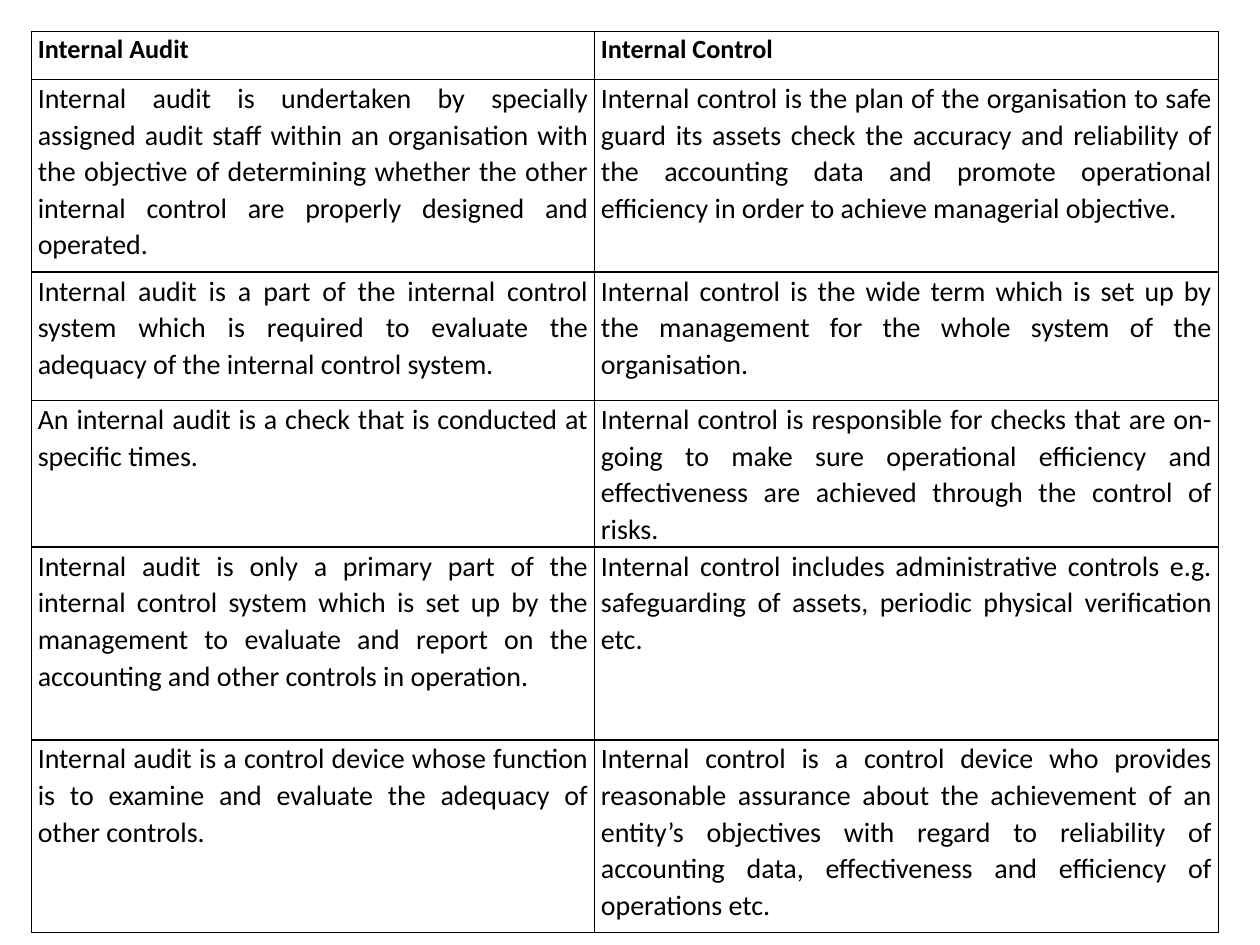
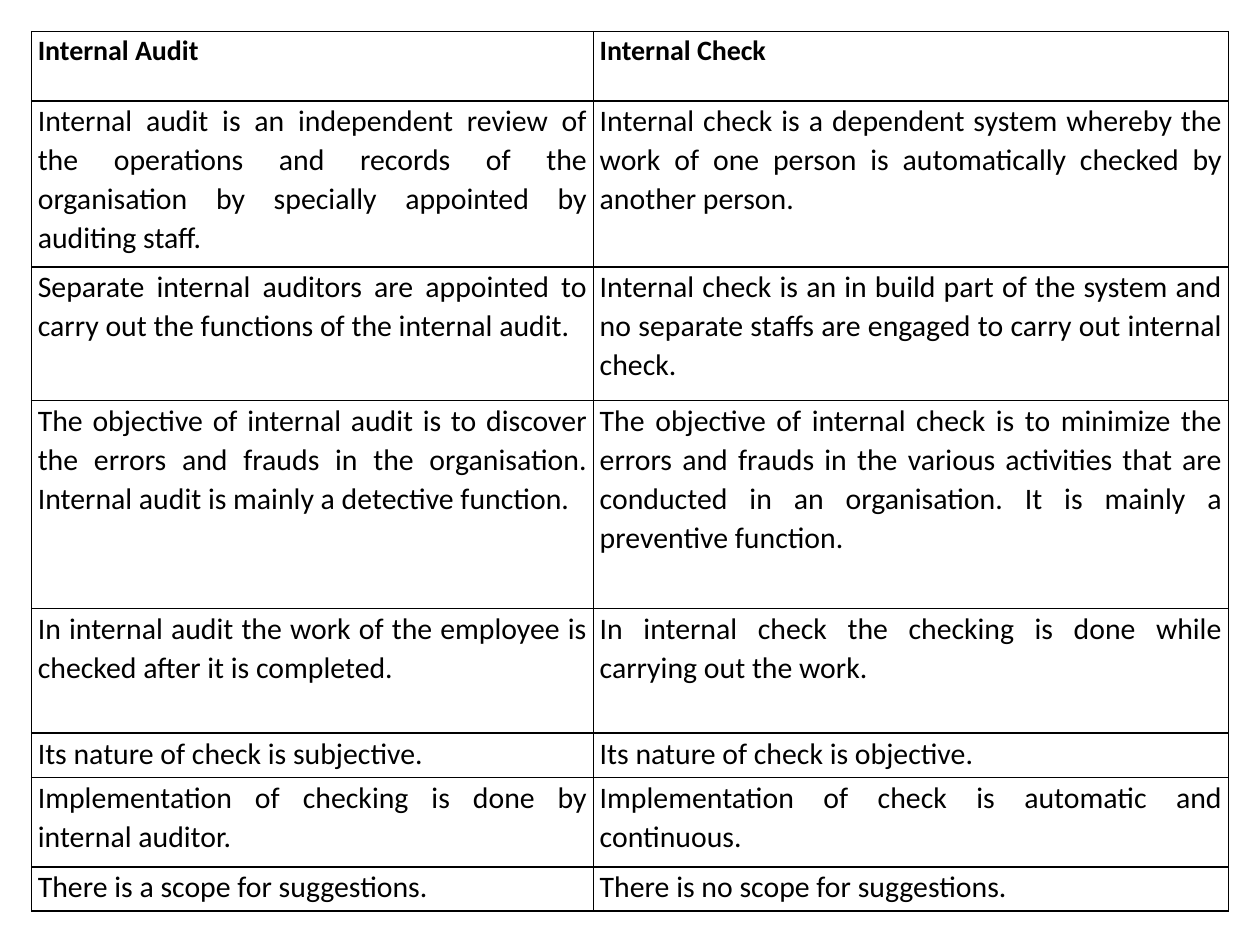
from lxml import etree
from pptx import Presentation
from pptx.dml.color import RGBColor
from pptx.enum.text import PP_ALIGN
from pptx.oxml.ns import qn
from pptx.util import Inches, Pt

JUSTIFY = PP_ALIGN.JUSTIFY
BLANK_LAYOUT = 6

THEME = {
    "font": "Calibri",
    "ink": "000000",
    "line_width": Pt(1),
    "line_spacing": 1.07,
    "left": 0.25,
    "top": 0.25,
}
CELL_FORMAT = {
    "margin_left": Inches(0.05),
    "margin_right": Inches(0.05),
    "margin_top": 0,
    "margin_bottom": 0,
}

# Each comparison: type sizes, column widths, row heights and text
COMPARISONS = [
    {
        "head_size": 15,
        "body_size": 16,
        "cols": [4.47, 4.95],
        "rows": [0.38, 1.53, 1.02, 1.02, 1.53, 1.53],
        "text": [
            ("Internal Audit", "Internal Control"),
            ("Internal audit is undertaken by specially assigned audit staff within an "
             "organisation with the objective of determining whether the other internal "
             "control are properly designed and operated.",
             "Internal control is the plan of the organisation to safe guard its assets "
             "check the accuracy and reliability of the accounting data and promote "
             "operational efficiency in order to achieve managerial objective."),
            ("Internal audit is a part of the internal control system which is required "
             "to evaluate the adequacy of the internal control system.",
             "Internal control is the wide term which is set up by the management for "
             "the whole system of the organisation."),
            ("An internal audit is a check that is conducted at specific times.",
             "Internal control is responsible for checks that are on-going to make sure "
             "operational efficiency and effectiveness are achieved through the control "
             "of risks."),
            ("Internal audit is only a primary part of the internal control system which "
             "is set up by the management to evaluate and report on the accounting and "
             "other controls in operation.",
             "Internal control includes administrative controls e.g. safeguarding of "
             "assets, periodic physical verification etc."),
            ("Internal audit is a control device whose function is to examine and "
             "evaluate the adequacy of other controls.",
             "Internal control is a control device who provides reasonable assurance "
             "about the achievement of an entity’s objectives with regard to reliability "
             "of accounting data, effectiveness and efficiency of operations etc."),
        ],
    },
    {
        "head_size": 16,
        "body_size": 17,
        "cols": [4.46, 5.04],
        "rows": [0.55, 1.32, 1.06, 1.65, 0.99, 0.35, 0.71, 0.35],
        "text": [
            ("Internal Audit", "Internal Check"),
            ("Internal audit is an independent review of the operations and records of "
             "the organisation by specially appointed by auditing staff.",
             "Internal check is a dependent system whereby the work of one person is "
             "automatically checked by another person."),
            ("Separate internal auditors are appointed to carry out the functions of the "
             "internal audit.",
             "Internal check is an in build part of the system and no separate staffs "
             "are engaged to carry out internal check."),
            ("The objective of internal audit is to discover the errors and frauds in "
             "the organisation. Internal audit is mainly a detective function.",
             "The objective of internal check is to minimize the errors and frauds in "
             "the various activities that are conducted in an organisation. It is mainly "
             "a preventive function."),
            ("In internal audit the work of the employee is checked after it is completed.",
             "In internal check the checking is done while carrying out the work."),
            ("Its nature of check is subjective.", "Its nature of check is objective."),
            ("Implementation of checking is done by internal auditor.",
             "Implementation of check is automatic and continuous."),
            ("There is a scope for suggestions.", "There is no scope for suggestions."),
        ],
    },
]


def add_borders(cell):
    """Draw a solid line on all four sides of a cell."""
    tcPr = cell._tc.get_or_add_tcPr()
    for side in ("a:lnL", "a:lnR", "a:lnT", "a:lnB"):
        ln = etree.SubElement(tcPr, qn(side), w=str(THEME["line_width"]))
        fill = etree.SubElement(ln, qn("a:solidFill"))
        etree.SubElement(fill, qn("a:srgbClr"), val=THEME["ink"])


def format_cell(cell, text, size, bold):
    """Set the text, margins, borders and fill of a cell."""
    for name, value in CELL_FORMAT.items():
        setattr(cell, name, value)
    add_borders(cell)
    cell.fill.background()
    p = cell.text_frame.paragraphs[0]
    p.alignment = JUSTIFY
    p.line_spacing = THEME["line_spacing"]
    r = p.add_run()
    r.text = text
    font_format = {"name": THEME["font"], "size": Pt(size), "bold": bold}
    for name, value in font_format.items():
        setattr(r.font, name, value)
    r.font.color.rgb = RGBColor.from_string(THEME["ink"])


prs = Presentation()
prs.slide_width, prs.slide_height = Inches(10), Inches(7.5)

# One slide with one table per comparison
for comparison in COMPARISONS:
    cols, rows = comparison["cols"], comparison["rows"]
    s = prs.slides.add_slide(prs.slide_layouts[BLANK_LAYOUT])
    table = s.shapes.add_table(
        len(rows), len(cols), Inches(THEME["left"]), Inches(THEME["top"]),
        Inches(sum(cols)), Inches(sum(rows))).table
    table.first_row = table.horz_banding = False

    # Grid
    for column, width in zip(table.columns, cols):
        column.width = Inches(width)
    for row, height in zip(table.rows, rows):
        row.height = Inches(height)

    # Text, with a bold heading row
    for i, row_text in enumerate(comparison["text"]):
        size = comparison["body_size"] if i else comparison["head_size"]
        for j, text in enumerate(row_text):
            format_cell(table.cell(i, j), text, size, bold=i == 0)

prs.save("out.pptx")
